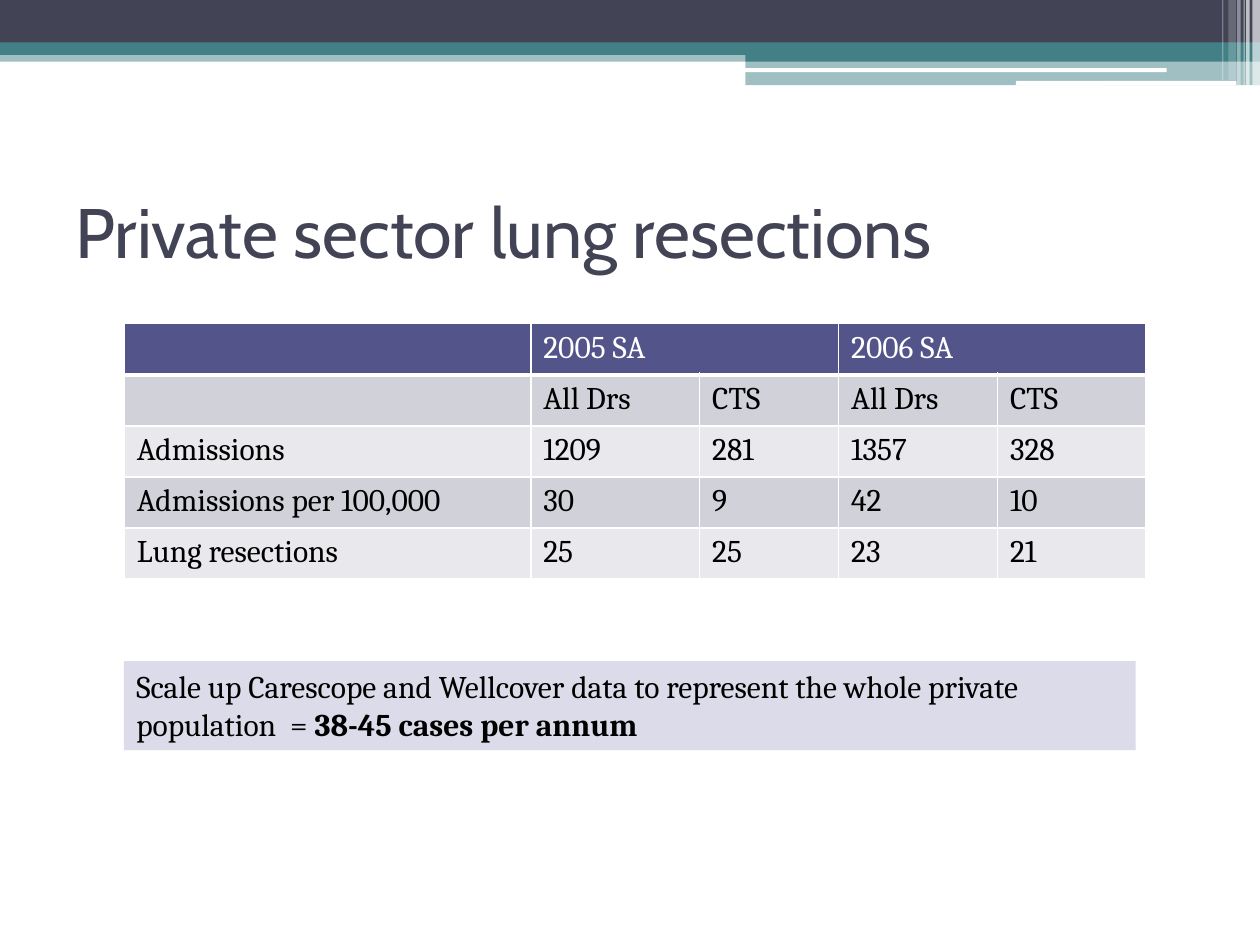
from dataclasses import dataclass

from lxml.etree import SubElement
from pptx import Presentation
from pptx.dml.color import RGBColor
from pptx.enum.shapes import MSO_SHAPE as SHAPE
from pptx.enum.text import MSO_ANCHOR as ANCHOR, PP_ALIGN as ALIGN
from pptx.oxml.ns import qn
from pptx.util import Pt


@dataclass(frozen=True)
class Theme:
    navy: str = "424456"
    teal: str = "438086"
    white: str = "FFFFFF"
    black: str = "000000"
    header: str = "53548A"
    band_dark: str = "D1D1DA"
    band_light: str = "E9E9ED"
    note: str = "DBDBE9"
    title_font: str = "Cabin"
    body_font: str = "Cambria"
    title_size: int = 40
    body_size: int = 18


THEME = Theme()

# left, top, width, height, colour, opacity in percent
BANDS = [
    (0, 28.8, 720, 6.5, THEME.teal, 50),
    (0, 0, 720, 24.5, THEME.navy, 100),
    (0, 24.2, 720, 7.2, THEME.teal, 100),
    (426, 28, 294, 7.2, THEME.teal, 100),
    (426, 35.2, 294, 13.5, THEME.teal, 50),
]
ROUNDED_LINES = [(425.5, 39, 241.2, 2.2), (580.5, 46.3, 126, 2.6)]
# left, width, height, opacity in percent
STRIPES = [
    (715.7, 4.3, 49, 65),
    (712.1, 2, 49, 65),
    (710.6, 0.7, 49, 60),
    (707, 2, 49, 40),
    (702, 4.3, 46, 20),
    (698.4, 0.7, 46, 30),
]
COLUMNS = [232.3, 96.5, 79.4, 90.8, 85]
ROW_HEIGHT = 29.2
ROWS = [
    ["", "2005 SA", "", "2006 SA", ""],
    ["", "All Drs", "CTS", "All Drs", "CTS"],
    ["Admissions", "1209", "281", "1357", "328"],
    ["Admissions per 100,000", "30", "9", "42", "10"],
    ["Lung resections", "25", "25", "23", "21"],
]
NOTE = [
    [("Scale up Carescope and Wellcover data to represent the whole private", False)],
    [("population  = ", False), ("38-45 cases per annum", True)],
]


def rgb(color):
    return RGBColor.from_string(color)


def add_block(slide, box, color, opacity=100, kind=SHAPE.RECTANGLE):
    sp = slide.shapes.add_shape(kind, *map(Pt, box))
    sp.shadow.inherit = False
    sp.line.fill.background()
    sp.fill.solid()
    sp.fill.fore_color.rgb = rgb(color)
    if opacity < 100:
        clr = sp.fill._xPr.find(".//" + qn("a:srgbClr"))
        SubElement(clr, qn("a:alpha"), val=str(opacity * 1000))
    return sp


def add_run(p, text, color, font=THEME.body_font, size=THEME.body_size, bold=False):
    r = p.add_run()
    r.text = text
    r.font.name = font
    r.font.size = Pt(size)
    r.font.bold = bold
    r.font.color.rgb = rgb(color)


def add_decoration(slide):
    for *box, color, opacity in BANDS:
        add_block(slide, box, color, opacity)
    for box in ROUNDED_LINES:
        add_block(slide, box, THEME.white, kind=SHAPE.ROUNDED_RECTANGLE)
    for left, width, height, opacity in STRIPES:
        add_block(slide, (left, 0, width, height), THEME.white, opacity)


def add_title(slide, text):
    tf = slide.shapes.add_textbox(Pt(36), Pt(90), Pt(648), Pt(84)).text_frame
    tf.word_wrap = True
    tf.vertical_anchor = ANCHOR.MIDDLE
    add_run(tf.paragraphs[0], text, THEME.navy, THEME.title_font, THEME.title_size)


def set_borders(cell, bottom):
    """Draw white cell borders, 1 pt except for the given bottom width."""
    tcPr = cell._tc.get_or_add_tcPr()
    widths = {"a:lnL": 1, "a:lnR": 1, "a:lnT": 1, "a:lnB": bottom}
    for i, (tag, width) in enumerate(widths.items()):
        ln = SubElement(tcPr, qn(tag), w=str(Pt(width)))
        SubElement(SubElement(ln, qn("a:solidFill")), qn("a:srgbClr"), val=THEME.white)
        tcPr.insert(i, ln)


def add_resection_table(slide):
    frame = slide.shapes.add_table(
        len(ROWS), len(COLUMNS), Pt(71), Pt(185),
        Pt(sum(COLUMNS)), Pt(ROW_HEIGHT * len(ROWS)))
    table = frame.table
    table.first_row = table.horz_banding = False
    for column, width in zip(table.columns, COLUMNS):
        column.width = Pt(width)
    for i, values in enumerate(ROWS):
        table.rows[i].height = Pt(ROW_HEIGHT)
        is_header = i == 0
        band = THEME.band_dark if i % 2 else THEME.band_light
        for j, value in enumerate(values):
            cell = table.cell(i, j)
            cell.fill.solid()
            cell.fill.fore_color.rgb = rgb(THEME.header if is_header else band)
            set_borders(cell, bottom=3 if is_header else 1)
            if value:
                add_run(cell.text_frame.paragraphs[0], value,
                        THEME.white if is_header else THEME.black)
    for first in (1, 3):
        table.cell(0, first).merge(table.cell(0, first + 1))


def add_note(slide):
    sp = add_block(slide, (70.8, 377.8, 578.2, 50.9), THEME.note)
    tf = sp.text_frame
    tf.word_wrap = True
    tf.vertical_anchor = ANCHOR.TOP
    for i, runs in enumerate(NOTE):
        p = tf.add_paragraph() if i else tf.paragraphs[0]
        p.alignment = ALIGN.LEFT
        for text, bold in runs:
            add_run(p, text, THEME.black, bold=bold)


def main():
    prs = Presentation()
    prs.slide_width, prs.slide_height = Pt(720), Pt(540)
    slide = prs.slides.add_slide(prs.slide_layouts[6])
    add_decoration(slide)
    add_title(slide, "Private sector lung resections")
    add_resection_table(slide)
    add_note(slide)
    prs.save("out.pptx")


if __name__ == "__main__":
    main()
